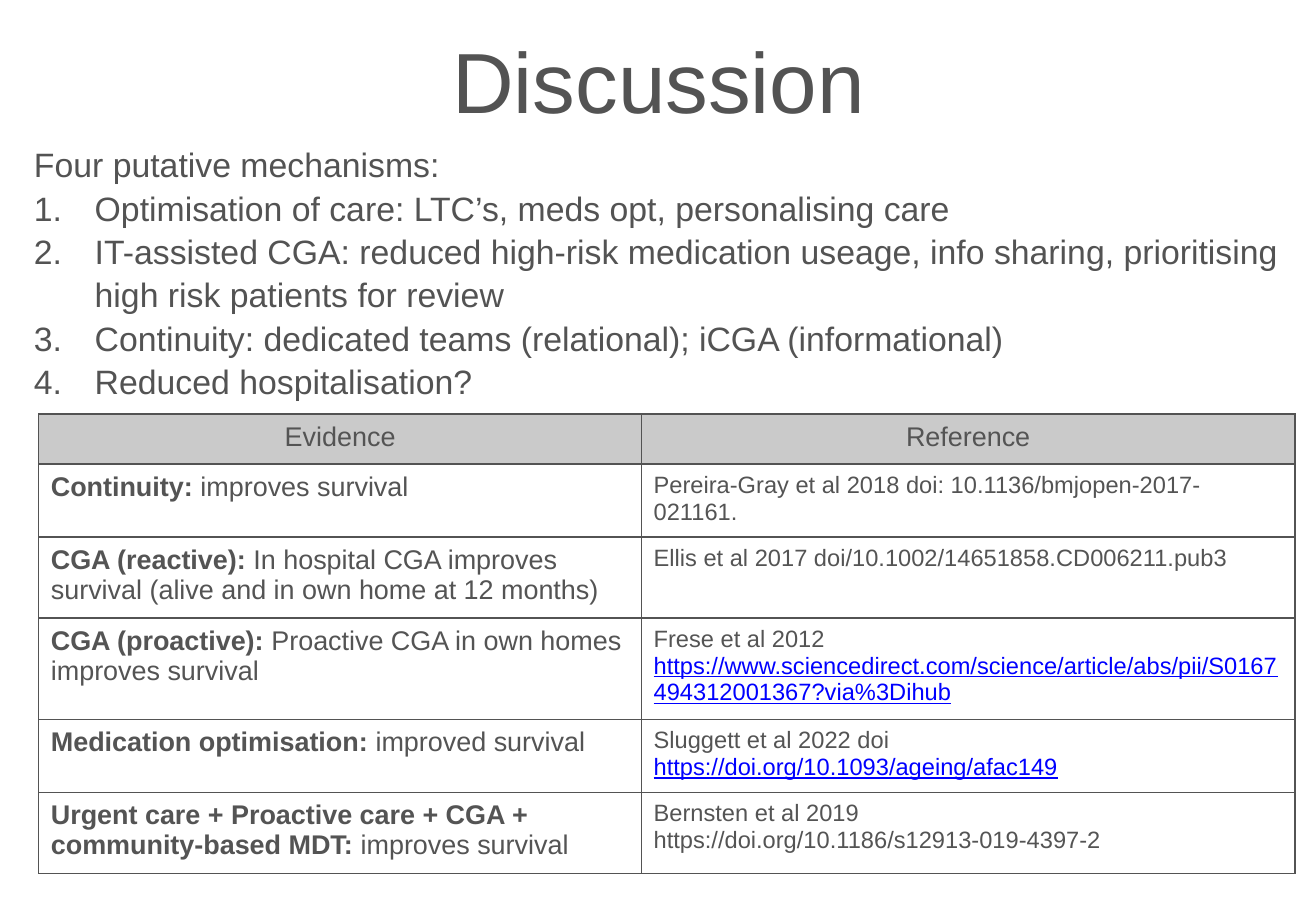
"""Build the Discussion slide: four mechanisms and a table of evidence."""
from lxml import etree
from pptx import Presentation
from pptx import util as u
from pptx.dml.color import RGBColor
from pptx.enum import text
from pptx.oxml import ns

TITLE = "Discussion"
INTRO = "Four putative mechanisms:"
MECHANISMS = [
    "Optimisation of care: LTC’s, meds opt, personalising care",
    "IT-assisted CGA: reduced high-risk medication useage, info sharing, "
    "prioritising high risk patients for review",
    "Continuity: dedicated teams (relational); iCGA (informational)",
    "Reduced hospitalisation?",
]
HEADERS = ["Evidence", "Reference"]
EVIDENCE = [
    ("Continuity:", " improves survival",
     ["Pereira-Gray et al 2018 doi: 10.1136/bmjopen-2017-021161."], ""),
    ("CGA (reactive): ", "In hospital CGA improves survival (alive and in own home at 12 months)",
     ["Ellis et al 2017 doi/10.1002/14651858.CD006211.pub3"], ""),
    ("CGA (proactive): ", "Proactive CGA in own homes improves survival",
     ["Frese et al 2012 "],
     "https://www.sciencedirect.com/science/article/abs/pii/S0167494312001367?via%3Dihub"),
    ("Medication optimisation: ", "improved survival",
     ["Sluggett et al 2022 doi "], "https://doi.org/10.1093/ageing/afac149"),
    ("Urgent care + Proactive care + CGA + community-based MDT: ", "improves survival",
     ["Bernsten et al 2019", "https://doi.org/10.1186/s12913-019-4397-2"], ""),
]
COL_WIDTHS = [12.6, 13.66]
ROW_HEIGHTS = [1.04, 1.44, 1.6, 2.03, 1.44, 1.6]
GREY, CELL_GREY, HEADER_FILL, LINK = "535353", "545454", "CACACA", "0000FF"
TITLE_FRAME = {"margin_top": 0, "margin_bottom": u.Cm(0.18),
               "vertical_anchor": text.MSO_ANCHOR.MIDDLE,
               "auto_size": text.MSO_AUTO_SIZE.NONE}
BODY_FRAME = {"vertical_anchor": text.MSO_ANCHOR.MIDDLE,
              "auto_size": text.MSO_AUTO_SIZE.SHAPE_TO_FIT_TEXT,
              **{f"margin_{side}": u.Cm(0.15) for side in ("left", "right", "top", "bottom")}}
CELL_FORMAT = {"margin_top": u.Cm(0.17), "margin_bottom": u.Cm(0.17)}


def rgb(color):
    return RGBColor.from_string(color)


def set_format(obj, values):
    for name, value in values.items():
        setattr(obj, name, value)


def place(sp, left, top, width, height):
    set_format(sp, {"left": u.Cm(left), "top": u.Cm(top),
                    "width": u.Cm(width), "height": u.Cm(height)})


def add_run(p, words, size, color, **extra):
    r = p.add_run()
    r.text = words
    set_format(r.font, {"name": "Arial", "size": u.Pt(size), **extra})
    r.font.color.rgb = rgb(color)


def paragraph(tf, index):
    return tf.paragraphs[0] if index == 0 else tf.add_paragraph()


def set_number(p, numbered):
    pPr = p._p.get_or_add_pPr()
    indent = u.Cm(1.27) if numbered else 0
    pPr.set("marL", str(indent))
    pPr.set("indent", str(-indent))
    if numbered:
        etree.SubElement(pPr, ns.qn("a:buAutoNum"), type="arabicPeriod")
    else:
        etree.SubElement(pPr, ns.qn("a:buNone"))


def style_cell(cell, fill=None):
    set_format(cell, CELL_FORMAT)
    if fill:
        cell.fill.solid()
        cell.fill.fore_color.rgb = rgb(fill)
    else:
        cell.fill.background()
    tcPr = cell._tc.get_or_add_tcPr()
    for i, side in enumerate("LRTB"):
        ln = etree.Element(ns.qn(f"a:ln{side}"), w=str(u.Pt(1)))
        line_fill = etree.SubElement(ln, ns.qn("a:solidFill"))
        etree.SubElement(line_fill, ns.qn("a:srgbClr"), val=GREY)
        tcPr.insert(i, ln)


def add_title(s):
    sp = s.shapes.title
    place(sp, 3.05, 0.36, 21.44, 2.79)
    set_format(sp.text_frame, TITLE_FRAME)
    p = sp.text_frame.paragraphs[0]
    p.alignment = text.PP_ALIGN.CENTER
    add_run(p, TITLE, 50.6, GREY)


def add_mechanisms(s):
    sp = s.placeholders[1]
    place(sp, 0.56, 2.97, 26.57, 5.41)
    tf = sp.text_frame
    set_format(tf, BODY_FRAME)
    for i, line in enumerate([INTRO] + MECHANISMS):
        p = paragraph(tf, i)
        set_number(p, i > 0)
        set_format(p, {"line_spacing": 1.07, "space_before": u.Pt(0)})
        add_run(p, line, 20, GREY)


def add_evidence(s):
    frame = s.shapes.add_table(len(ROW_HEIGHTS), len(COL_WIDTHS), u.Cm(0.81), u.Cm(8.66),
                               u.Cm(sum(COL_WIDTHS)), u.Cm(sum(ROW_HEIGHTS)))
    table = frame.table
    set_format(table, {"first_row": False, "horz_banding": False})
    for column, width in zip(table.columns, COL_WIDTHS):
        column.width = u.Cm(width)
    for row, height in zip(table.rows, ROW_HEIGHTS):
        row.height = u.Cm(height)
    for col, header in enumerate(HEADERS):
        cell = table.cell(0, col)
        style_cell(cell, HEADER_FILL)
        p = cell.text_frame.paragraphs[0]
        p.alignment = text.PP_ALIGN.CENTER
        add_run(p, header, 16, CELL_GREY)
    for row, (topic, finding, references, link) in enumerate(EVIDENCE, 1):
        evidence, reference = table.cell(row, 0), table.cell(row, 1)
        style_cell(evidence)
        style_cell(reference)
        p = evidence.text_frame.paragraphs[0]
        add_run(p, topic, 16, CELL_GREY, bold=True)
        add_run(p, finding, 16, CELL_GREY)
        for i, line in enumerate(references):
            p = paragraph(reference.text_frame, i)
            add_run(p, line, 14, CELL_GREY)
        if link:
            add_run(p, link, 14, LINK, underline=True)


def main():
    prs = Presentation()
    set_format(prs, {"slide_width": u.Cm(27.51), "slide_height": u.Cm(19.05)})
    s = prs.slides.add_slide(prs.slide_layouts[1])
    add_title(s)
    add_mechanisms(s)
    add_evidence(s)
    prs.save("out.pptx")


if __name__ == "__main__":
    main()
